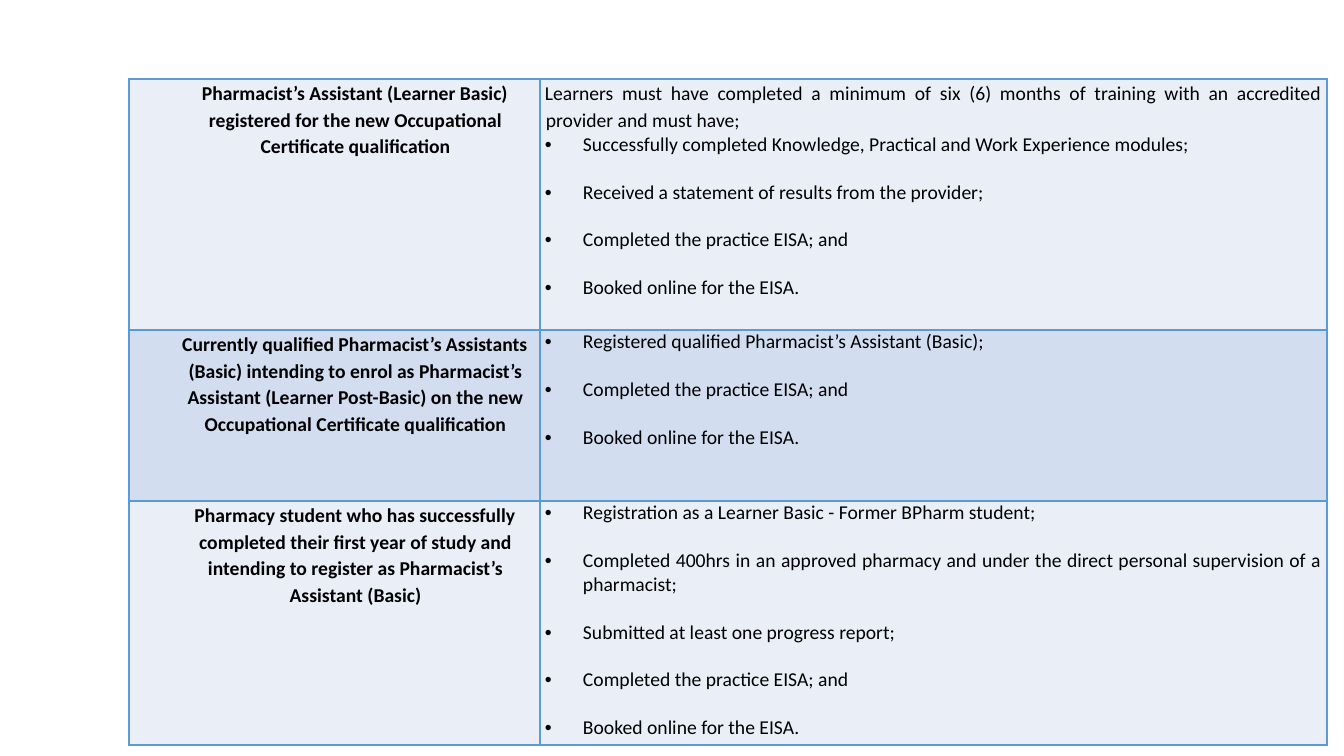
from lxml.etree import SubElement
from pptx import Presentation
from pptx.dml.color import RGBColor
from pptx.enum.text import PP_ALIGN
from pptx.oxml.ns import qn
from pptx.util import Pt

PX = 914400 / 100.8
FONT = "Calibri"
SIZE = 14
COLORS = {"text": "000000", "border": "5B9BD5", "light": "EAEFF7", "dark": "D2DEEF"}
COL_WIDTHS = [411, 787]

# Row height, fill, group of candidates, lead-in sentence, criteria
CRITERIA = [
    (251, "light",
     "Pharmacist’s Assistant (Learner Basic) registered for the new Occupational "
     "Certificate qualification",
     "Learners must have completed a minimum of six (6) months of training with an "
     "accredited provider and must have;",
     ["Successfully completed Knowledge, Practical and Work Experience modules;",
      "Received a statement of results from the provider;",
      "Completed the practice EISA; and",
      "Booked online for the EISA."]),
    (171, "dark",
     "Currently qualified Pharmacist’s Assistants (Basic) intending to enrol as "
     "Pharmacist’s Assistant (Learner Post-Basic) on the new Occupational "
     "Certificate qualification",
     None,
     ["Registered qualified Pharmacist’s Assistant (Basic);",
      "Completed the practice EISA; and",
      "Booked online for the EISA."]),
    (244, "light",
     "Pharmacy student who has successfully completed their first year of study and "
     "intending to register as Pharmacist’s Assistant (Basic)",
     None,
     ["Registration as a Learner Basic - Former BPharm student;",
      "Completed 400hrs in an approved pharmacy and under the direct personal "
      "supervision of a pharmacist;",
      "Submitted at least one progress report;",
      "Completed the practice EISA; and",
      "Booked online for the EISA."]),
]


def px(n):
    return round(n * PX)


def style_cell(cell, fill):
    cell.margin_left = cell.margin_right = px(5)
    cell.margin_top = cell.margin_bottom = 0
    tcPr = cell._tc.get_or_add_tcPr()
    for side in ("lnL", "lnR", "lnT", "lnB"):
        ln = SubElement(tcPr, qn(f"a:{side}"), w=str(Pt(1)))
        solid = SubElement(ln, qn("a:solidFill"))
        SubElement(solid, qn("a:srgbClr"), val=COLORS["border"])
    cell.fill.solid()
    cell.fill.fore_color.rgb = RGBColor.from_string(COLORS[fill])


def write(p, text, align, left, hanging, bold=False, bullet=False):
    pPr = p._p.get_or_add_pPr()
    pPr.set("marL", str(px(left)))
    pPr.set("indent", str(-px(hanging)))
    if bullet:
        SubElement(pPr, qn("a:buFont"), typeface="Arial")
        SubElement(pPr, qn("a:buChar"), char="•")
    else:
        SubElement(pPr, qn("a:buNone"))
        p.line_spacing = 1.12
        p.space_after = Pt(0.2)
    p.alignment = align
    r = p.add_run()
    r.text = text
    r.font.name = FONT
    r.font.size = Pt(SIZE)
    r.font.bold = bold
    r.font.color.rgb = RGBColor.from_string(COLORS["text"])


def write_criteria(tf, lead, items):
    p = tf.paragraphs[0]
    if lead:
        write(p, lead, PP_ALIGN.JUSTIFY, 1, 1)
        p = tf.add_paragraph()
    for i, item in enumerate(items):
        if i:
            p = tf.add_paragraph()
            p.space_before = Pt(17.1)
        write(p, item, PP_ALIGN.JUSTIFY, 38, 38, bullet=True)


def add_criteria_table(s, x, y):
    height = sum(row[0] for row in CRITERIA)
    table = s.shapes.add_table(len(CRITERIA), len(COL_WIDTHS), px(x), px(y),
                               px(sum(COL_WIDTHS)), px(height)).table
    table.first_row = table.horz_banding = False
    for column, width in zip(table.columns, COL_WIDTHS):
        column.width = px(width)
    for row, (row_height, fill, group, lead, items) in zip(table.rows, CRITERIA):
        row.height = px(row_height)
        for cell in row.cells:
            style_cell(cell, fill)
        group_cell, criteria_cell = row.cells
        write(group_cell.text_frame.paragraphs[0], group, PP_ALIGN.CENTER, 42, 1, bold=True)
        write_criteria(criteria_cell.text_frame, lead, items)


def main():
    prs = Presentation()
    prs.slide_width, prs.slide_height = px(1344), px(756)
    s = prs.slides.add_slide(prs.slide_layouts[6])
    add_criteria_table(s, 129, 79)
    prs.save("out.pptx")


if __name__ == "__main__":
    main()
